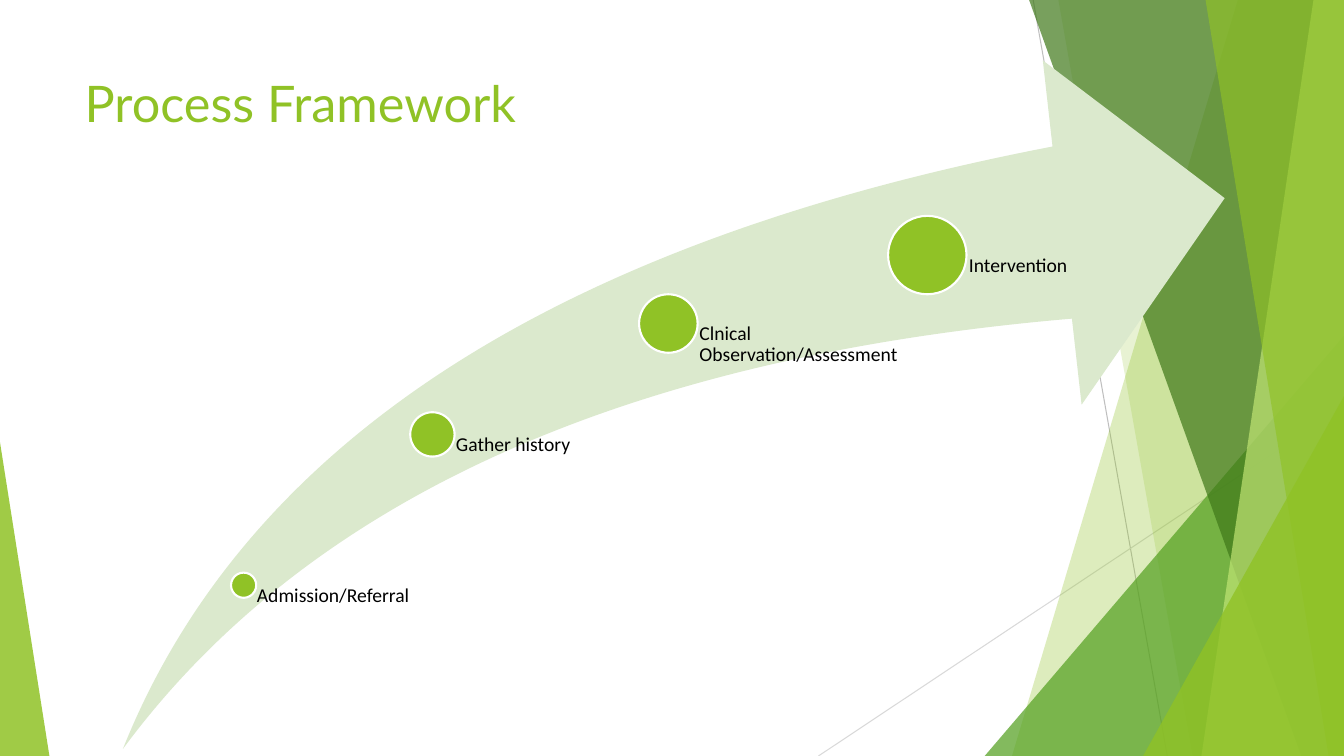
"""Build the Process Framework slide: a swoosh arrow with four growing milestones."""
from dataclasses import dataclass

from lxml import etree
from pptx import Presentation
from pptx import util as u
from pptx.dml.color import RGBColor
from pptx.enum import shapes, text
from pptx.oxml import ns


@dataclass(frozen=True)
class Theme:
    lime: str = "90C226"
    green: str = "54A021"
    forest: str = "3F7819"
    pale_lime: str = "C0E474"
    swoosh: str = "DBE9CD"
    white: str = "FFFFFF"
    ink: str = "000000"
    rule: str = "BFBFBF"
    light_rule: str = "D9D9D9"
    title_font: str = "Lato"
    label_font: str = "Calibri"
    title_size: float = 36
    label_size: float = 14


WIDTH, HEIGHT = 960, 540
SWOOSH_BOX = (87.8, 43.2, 787, 491.8)
THEME = Theme()

RULES = [
    (738, 0, 833.8, HEIGHT, THEME.rule),
    (WIDTH, 290.2, 584.6, HEIGHT, THEME.light_rule),
]
BACK_RIBBONS = [(884.2, 722.9, THEME.lime, 30), (756, 851.8, THEME.lime, 20)]
FRONT_RIBBONS = [
    (735.1, 929.5, THEME.forest, 70),
    (938.2, 858.2, THEME.pale_lime, 70),
    (861.1, 949, THEME.lime, 65),
]
BACK_PEAK = (703.4, 239.8, 256.6, 300.2, 1, THEME.green, 72)
FRONT_PEAKS = [
    (816.5, 283, 143.5, 257, 1, THEME.lime, 80),
    (0, 316, 35.3, 224, 0, THEME.lime, 85),
]
STEPS = [
    ("Admission/Referral", 174, 418, 18, 134.6),
    ("Gather history", 308.9, 310.3, 31.7, 165.6),
    ("Clnical Observation/Assessment", 477.4, 231.1, 41.8, 165.6),
    ("Intervention", 662.4, 182.2, 56, 165.6),
]


def write(frame, words, *, font, size, color, left=7.2, top=3.6, right=7.2,
          bottom=3.6, spacing=None):
    """Put one formatted, top-left paragraph into a text frame."""
    frame.word_wrap = True
    frame.auto_size = text.MSO_AUTO_SIZE.NONE
    frame.vertical_anchor = text.MSO_ANCHOR.TOP
    frame.margin_left, frame.margin_top = u.Pt(left), u.Pt(top)
    frame.margin_right, frame.margin_bottom = u.Pt(right), u.Pt(bottom)
    paragraph = frame.paragraphs[0]
    paragraph.alignment = text.PP_ALIGN.LEFT
    paragraph.line_spacing = spacing
    run = paragraph.add_run()
    run.text = words
    run.font.name, run.font.size = font, u.Pt(size)
    run.font.color.rgb = RGBColor.from_string(color)


class Deck:
    """Hold the theme, the current slide and the group being drawn."""

    def __init__(self, theme):
        """Open a title-only slide."""
        self.theme = theme
        self.show = Presentation()
        self.show.slide_width, self.show.slide_height = u.Pt(WIDTH), u.Pt(HEIGHT)
        self.slide = self.show.slides.add_slide(self.show.slide_layouts[5])
        self.group = None

    def start_group(self):
        """Send the following elements to a new group."""
        self.group = self.slide.shapes.add_group_shape().shapes

    def paint(self, shape, fill, opacity=100, outline=None):
        """Fill and outline a shape without shadow."""
        shape.shadow.inherit = False
        shape.fill.solid()
        shape.fill.fore_color.rgb = RGBColor.from_string(fill)
        if opacity < 100:
            tint = shape.element.spPr.find(ns.qn("a:solidFill"))[0]
            etree.SubElement(tint, ns.qn("a:alpha"), val=str(opacity * 1000))
        if outline:
            shape.line.color.rgb = RGBColor.from_string(outline)
            shape.line.width = u.Pt(1.5)
        else:
            shape.line.fill.background()

    def preset(self, kind, box, fill, adjust=(), **style):
        """Draw a preset shape in a box of points."""
        shape = self.group.add_shape(kind, *map(u.Pt, box))
        for index, value in enumerate(adjust):
            shape.adjustments[index] = value
        self.paint(shape, fill, **style)

    def ribbon(self, top_x, bottom_x, fill, opacity):
        """Draw a full-height band from a slanted edge to the right margin."""
        builder = self.group.build_freeform(u.Pt(top_x), 0)
        corners = [(WIDTH, 0), (WIDTH, HEIGHT), (bottom_x, HEIGHT)]
        builder.add_line_segments([(u.Pt(x), u.Pt(y)) for x, y in corners])
        self.paint(builder.convert_to_shape(), fill, opacity)

    def peak(self, left, top, width, height, apex, fill, opacity):
        """Draw a translucent corner triangle."""
        self.preset(shapes.MSO_SHAPE.ISOSCELES_TRIANGLE, (left, top, width, height),
                    fill, (apex,), opacity=opacity)

    def rule(self, x1, y1, x2, y2, color):
        """Draw a hairline."""
        line = self.group.add_connector(shapes.MSO_CONNECTOR.STRAIGHT,
                                        *map(u.Pt, (x1, y1, x2, y2)))
        line.line.color.rgb = RGBColor.from_string(color)
        line.line.width = u.Pt(0.75)
        etree.SubElement(line.element.spPr, ns.qn("a:effectLst"))

    def title(self, words):
        """Place the slide title in its placeholder, above the decoration."""
        title = self.slide.shapes.title
        title.left, title.top = u.Pt(53.3), u.Pt(48)
        title.width, title.height = u.Pt(676.8), u.Pt(104)
        write(title.text_frame, words, font=self.theme.title_font,
              size=self.theme.title_size, color=self.theme.lime)
        title.element.getparent().append(title.element)

    def step(self, words, x, y, diameter, width):
        """Draw a milestone dot centred at x, y and its label."""
        dot = (x - diameter / 2, y - diameter / 2, diameter, diameter)
        self.preset(shapes.MSO_SHAPE.OVAL, dot, self.theme.lime,
                    outline=self.theme.white)
        floor = SWOOSH_BOX[1] + SWOOSH_BOX[3]
        label = self.group.add_textbox(*map(u.Pt, (x, y, width, floor - y)))
        write(label.text_frame, words, font=self.theme.label_font,
              size=self.theme.label_size, color=self.theme.ink,
              left=diameter * 0.53, top=0, right=0, bottom=0, spacing=0.9)


def main():
    """Build and save the slide."""
    deck = Deck(THEME)
    deck.start_group()
    for rule in RULES:
        deck.rule(*rule)
    for ribbon in BACK_RIBBONS:
        deck.ribbon(*ribbon)
    deck.peak(*BACK_PEAK)
    for ribbon in FRONT_RIBBONS:
        deck.ribbon(*ribbon)
    for peak in FRONT_PEAKS:
        deck.peak(*peak)
    deck.title("Process Framework")
    deck.start_group()
    deck.preset(shapes.MSO_SHAPE.SWOOSH_ARROW, SWOOSH_BOX, THEME.swoosh, (0.25, 0.25))
    for step in STEPS:
        deck.step(*step)
    deck.show.save("out.pptx")


if __name__ == "__main__":
    main()
